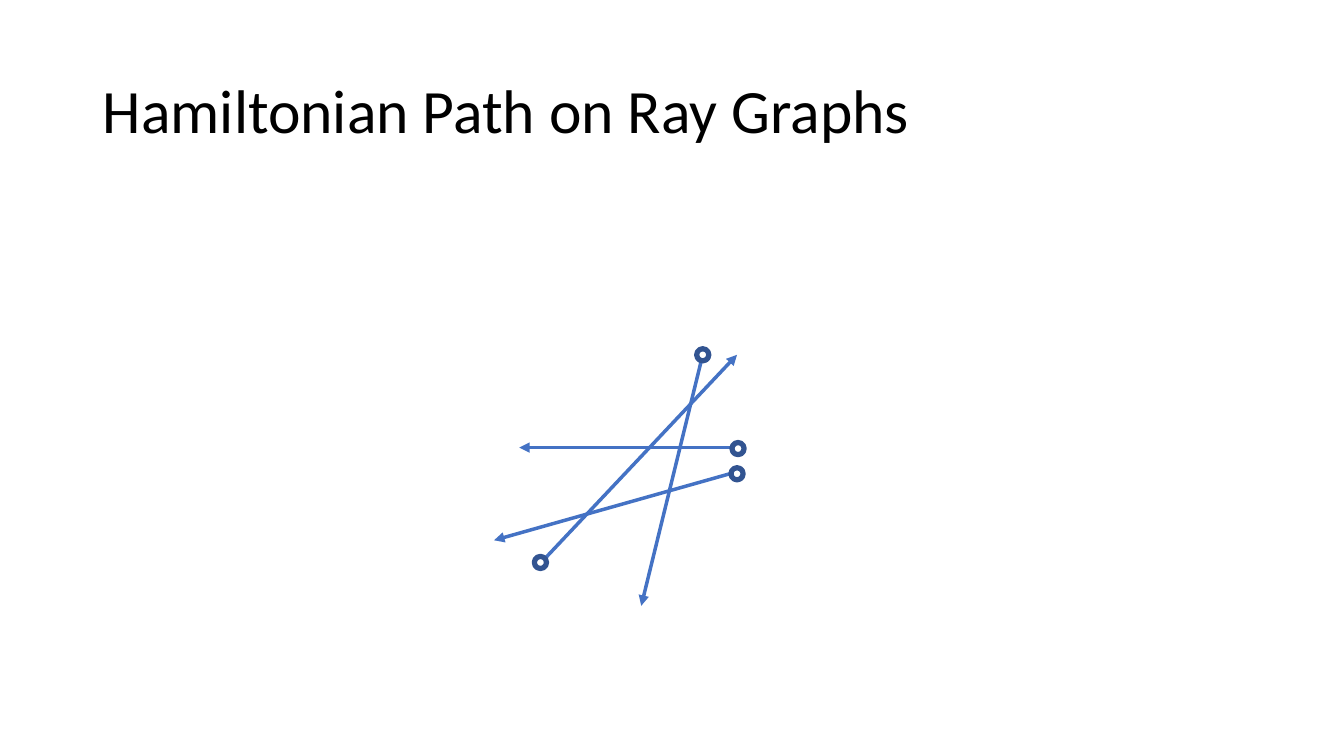
from pptx import Presentation
from pptx.dml.color import RGBColor
from pptx.enum.dml import MSO_LINE
from pptx.enum.shapes import MSO_CONNECTOR, MSO_SHAPE
from pptx.enum.text import MSO_ANCHOR, MSO_AUTO_SIZE, PP_ALIGN
from pptx.oxml.ns import qn
from pptx.util import Inches, Pt
from lxml.etree import SubElement

COLORS = {"title": "000000", "ray": "4472C4", "ring": "325491", "paper": "FFFFFF"}
CELL = Inches(0.01)
DOT = 12
TITLE_BOX = (92, 40, 1150, 145)
RAYS_BOX = (490, 352, 244, 249)
RAYS = [
    {"start": (207, 0), "tip": (146, 249), "dot": (207, 0)},
    {"start": (244, 92), "tip": (25, 92), "dot": (242, 93)},
    {"start": (241, 116), "tip": (0, 184), "dot": (241, 118)},
    {"start": (44, 209), "tip": (241, 0), "dot": (46, 206)},
]


def rgb(name):
    """Return the named colour."""
    return RGBColor.from_string(COLORS[name])


def apply(target, formats):
    """Set every format value on the target."""
    for name, value in formats.items():
        setattr(target, name, value)


def place_title(slide, box, wording):
    """Fill the title placeholder and fit it to its box."""
    title = slide.shapes.title
    left, top, width, height = (CELL * cells for cells in box)
    apply(title, {"left": left, "top": top, "width": width, "height": height})
    frame = title.text_frame
    apply(frame, {"text": wording, "word_wrap": True,
                  "auto_size": MSO_AUTO_SIZE.NONE,
                  "vertical_anchor": MSO_ANCHOR.MIDDLE})
    heading = frame.paragraphs[0]
    apply(heading, {"alignment": PP_ALIGN.LEFT, "line_spacing": 0.9})
    apply(heading.runs[0].font, {"name": "Calibri", "size": Pt(44)})
    heading.runs[0].font.color.rgb = rgb("title")


def draw_ray(slide, start, tip):
    """Draw an arrow from the start to the tip."""
    ray = slide.shapes.add_connector(MSO_CONNECTOR.STRAIGHT, *start, *tip)
    apply(ray.line, {"width": Pt(2.5), "dash_style": MSO_LINE.SOLID})
    ray.line.color.rgb = rgb("ray")
    outline = ray.line._get_or_add_ln()
    SubElement(outline, qn("a:tailEnd"), type="triangle")
    SubElement(ray._element.spPr, qn("a:effectLst"))


def draw_endpoint(slide, center):
    """Draw a ring around the center."""
    size = DOT * CELL
    left, top = (along - size // 2 for along in center)
    ring = slide.shapes.add_shape(MSO_SHAPE.OVAL, left, top, size, size)
    ring.shadow.inherit = False
    ring.fill.solid()
    ring.fill.fore_color.rgb = rgb("paper")
    ring.line.width = Pt(3.75)
    ring.line.color.rgb = rgb("ring")


def place_rays(slide, box, rays):
    """Draw the rays and then their endpoints inside the box."""
    left, top = box[:2]

    def on_slide(point):
        """Convert cells in the box to a slide position."""
        return (left + point[0]) * CELL, (top + point[1]) * CELL

    for ray in rays:
        draw_ray(slide, on_slide(ray["start"]), on_slide(ray["tip"]))
    for ray in rays:
        draw_endpoint(slide, on_slide(ray["dot"]))


def main():
    """Build the slide and save it."""
    deck = Presentation()
    apply(deck, {"slide_width": Inches(13.33), "slide_height": Inches(7.5)})
    slide = deck.slides.add_slide(deck.slide_layouts.get_by_name("Title Only"))
    place_title(slide, TITLE_BOX, "Hamiltonian Path on Ray Graphs")
    place_rays(slide, RAYS_BOX, RAYS)
    deck.save("out.pptx")


if __name__ == "__main__":
    main()
